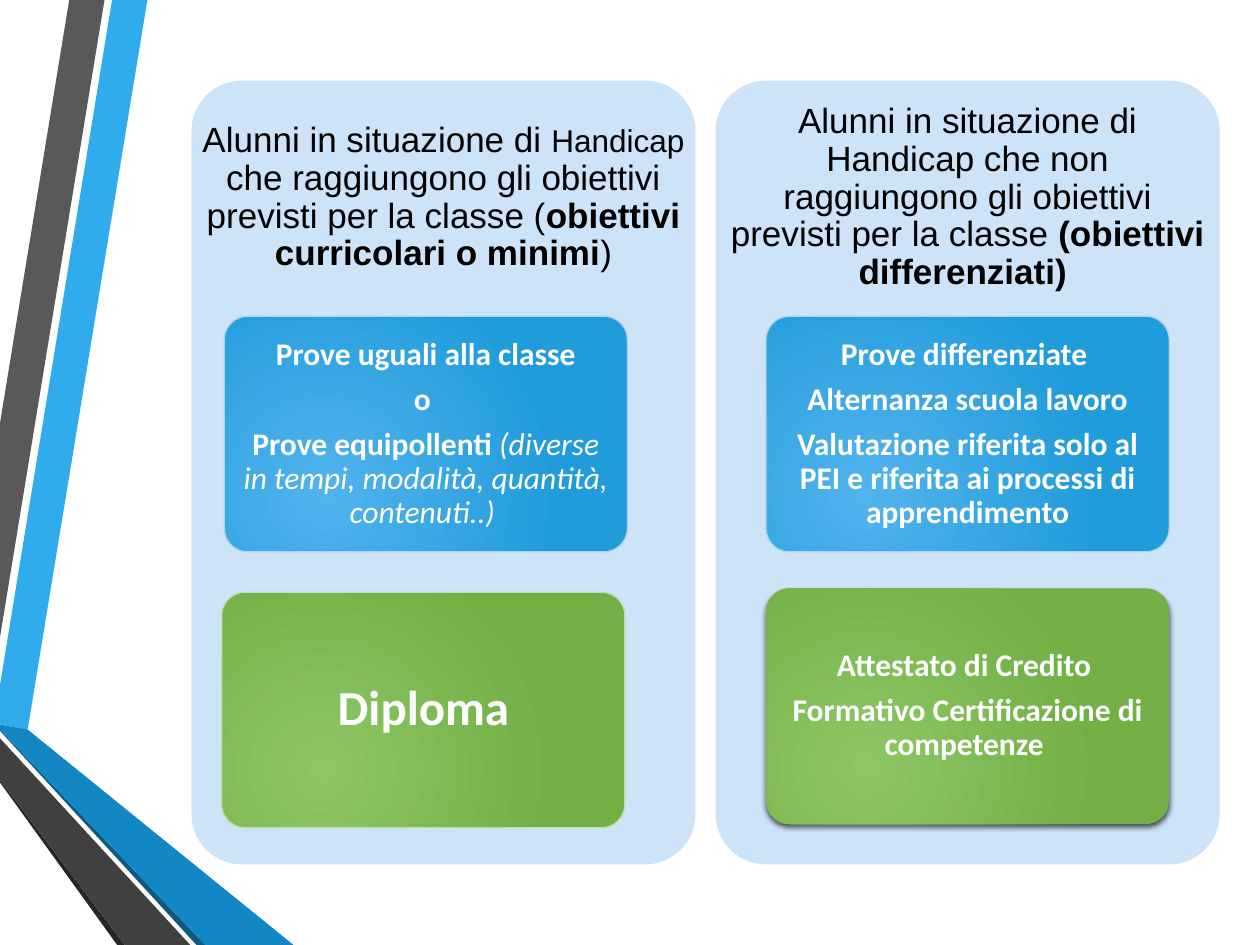
import pptx
import pptx.util
import pptx.dml.color
import pptx.enum.shapes
import pptx.enum.text
import pptx.oxml
import pptx.oxml.ns
from pptx.util import Inches

COLORS = {
    "sky": "30ACEC", "gray": "595959", "black_edge": "262626",
    "navy_edge": "0C5A82", "blue": "1287C3", "charcoal": "404040",
    "panel": "CDE3F8", "text": "000000", "white": "FFFFFF",
}
# Gradient centre, gradient rim and outline of each card
CARD_STYLES = {
    "blue": ("51B3ED", "219CDB", "AED2F4"),
    "green": ("8CC764", "72AF45", "C0DEB3"),
}
RIBBONS = [
    ("sky", [(0, 5.44), (0, 5.75), (0.22, 5.79), (1.17, 0), (0.89, 0)]),
    ("gray", [(0.83, 0), (0.55, 0), (0, 3.36), (0, 5.06)]),
    ("black_edge", [(0, 6.19), (0, 6.21), (0.93, 7.5), (0.99, 7.5)]),
    ("navy_edge", [(0, 5.79), (0, 5.8), (1.56, 7.5), (1.63, 7.5)]),
    ("blue", [(0, 5.79), (1.63, 7.5), (2.33, 7.5), (0.22, 5.79), (0, 5.75)]),
    ("charcoal", [(0, 6.19), (0.99, 7.5), (1.51, 7.5), (0, 5.86)]),
]
PANEL_W, PANEL_H, HEADING_H = 4, 6.22, 1.86
CARD_W, CARD_H, CARD_INSET = 3.2, 1.87, 0.055
A_NS = pptx.oxml.ns.nsdecls("a")


def rgb(hex_string):
    return pptx.dml.color.RGBColor.from_string(hex_string)


def fill_solid(sp, color):
    sp.shadow.inherit = False
    sp.fill.solid()
    sp.fill.fore_color.rgb = rgb(COLORS[color])
    sp.line.fill.background()


def add_round_rect(slide, left, top, width, height):
    sp = slide.shapes.add_shape(
        pptx.enum.shapes.MSO_SHAPE.ROUNDED_RECTANGLE,
        Inches(left), Inches(top), Inches(width), Inches(height))
    sp.adjustments[0] = 0.1
    return sp


def add_text(slide, box, paragraphs, font, color, size, inset):
    """Each paragraph is a list of runs: (text, style letters[, size])."""
    sp = slide.shapes.add_textbox(*[Inches(v) for v in box])
    tf = sp.text_frame
    tf.word_wrap = True
    tf.vertical_anchor = pptx.enum.text.MSO_ANCHOR.MIDDLE
    tf.margin_left = tf.margin_right = Inches(inset[0])
    tf.margin_top = tf.margin_bottom = Inches(inset[1])
    for i, runs in enumerate(paragraphs):
        p = tf.add_paragraph() if i else tf.paragraphs[0]
        p.alignment = pptx.enum.text.PP_ALIGN.CENTER
        p.line_spacing = 0.9
        p.space_after = pptx.util.Pt(0.35 * size)
        for text, style, *own_size in runs:
            r = p.add_run()
            r.text = text
            r.font.name = font
            r.font.size = pptx.util.Pt(own_size[0] if own_size else size)
            r.font.color.rgb = rgb(COLORS[color])
            r.font.bold = "b" in style
            r.font.italic = "i" in style


def add_ribbons(slide):
    for color, points in RIBBONS:
        start, *rest = [(Inches(x), Inches(y)) for x, y in points]
        builder = slide.shapes.build_freeform(*start)
        builder.add_line_segments(rest, close=True)
        fill_solid(builder.convert_to_shape(), color)


def add_card(slide, left, top, style, paragraphs, size=18,
             inset=(0.05, 0.04), raised=False):
    center, rim, outline = CARD_STYLES[style]
    sp = add_round_rect(slide, left, top, CARD_W, CARD_H)
    sp.shadow.inherit = False

    # Radial gradient centred in the lower left
    gradient = pptx.oxml.parse_xml(
        f'<a:gradFill {A_NS} rotWithShape="1"><a:gsLst>'
        f'<a:gs pos="0"><a:srgbClr val="{center}"/></a:gs>'
        f'<a:gs pos="100000"><a:srgbClr val="{rim}"/></a:gs></a:gsLst>'
        '<a:path path="circle"><a:fillToRect l="50000" t="100000" '
        'r="100000" b="50000"/></a:path></a:gradFill>')
    sp_pr = sp.element.spPr
    sp_pr.find(pptx.oxml.ns.qn("a:prstGeom")).addnext(gradient)

    # A raised card has a drop shadow in place of an outline
    if raised:
        sp.line.fill.background()
        sp_pr.find(pptx.oxml.ns.qn("a:effectLst")).append(pptx.oxml.parse_xml(
            f'<a:outerShdw {A_NS} blurRad="38100" dist="25400" dir="5400000" '
            'rotWithShape="0"><a:srgbClr val="000000">'
            '<a:alpha val="64000"/></a:srgbClr></a:outerShdw>'))
    else:
        sp.line.color.rgb = rgb(outline)
        sp.line.width = pptx.util.Pt(0.75)

    box = (left + CARD_INSET, top + CARD_INSET,
           CARD_W - 2 * CARD_INSET, CARD_H - 2 * CARD_INSET)
    add_text(slide, box, paragraphs, "Calibri", "white", size, inset)


def add_panel(slide, left, top, heading, cards):
    fill_solid(add_round_rect(slide, left, top, PANEL_W, PANEL_H), "panel")
    add_text(slide, (left, top, PANEL_W, HEADING_H), [heading],
             "Arial", "text", 20, (0.08, 0.08))
    for card in cards:
        dx, dy = card.pop("offset")
        add_card(slide, left + dx, top + dy, **card)


def main():
    prs = pptx.Presentation()
    prs.slide_width, prs.slide_height = Inches(10), Inches(7.5)
    slide = prs.slides.add_slide(prs.slide_layouts[6])
    add_ribbons(slide)

    # Pupils who reach the class objectives
    add_panel(slide, 1.52, 0.64, [
        ("Alunni in situazione di ", ""),
        ("Handicap", "", 18),
        (" che raggiungono gli obiettivi previsti per la classe (", ""),
        ("obiettivi curricolari o minimi", "b"),
        (")", ""),
    ], [
        dict(offset=(0.26, 1.87), style="blue", paragraphs=[
            [("Prove uguali alla classe", "b")],
            [("o ", "b")],
            [("Prove equipollenti ", "b"),
             ("(diverse in tempi, modalità, quantità, contenuti..) ", "i")],
        ]),
        dict(offset=(0.24, 4.06), style="green", size=28, inset=(0.08, 0.06),
             paragraphs=[[("Diploma", "b")]]),
    ])

    # Pupils with differentiated objectives
    add_panel(slide, 5.68, 0.64, [
        ("Alunni in situazione di Handicap che non raggiungono gli obiettivi "
         "previsti per la classe ", ""),
        ("(obiettivi differenziati) ", "b"),
    ], [
        dict(offset=(0.4, 1.87), style="blue", paragraphs=[
            [("Prove differenziate ", "b")],
            [("Alternanza scuola lavoro", "b")],
            [("Valutazione riferita solo al PEI e riferita ai processi di "
              "apprendimento", "b")],
        ]),
        dict(offset=(0.4, 4.03), style="green", raised=True, paragraphs=[
            [("Attestato di Credito ", "b")],
            [("Formativo Certificazione di competenze ", "b")],
        ]),
    ])
    prs.save("out.pptx")


if __name__ == "__main__":
    main()
